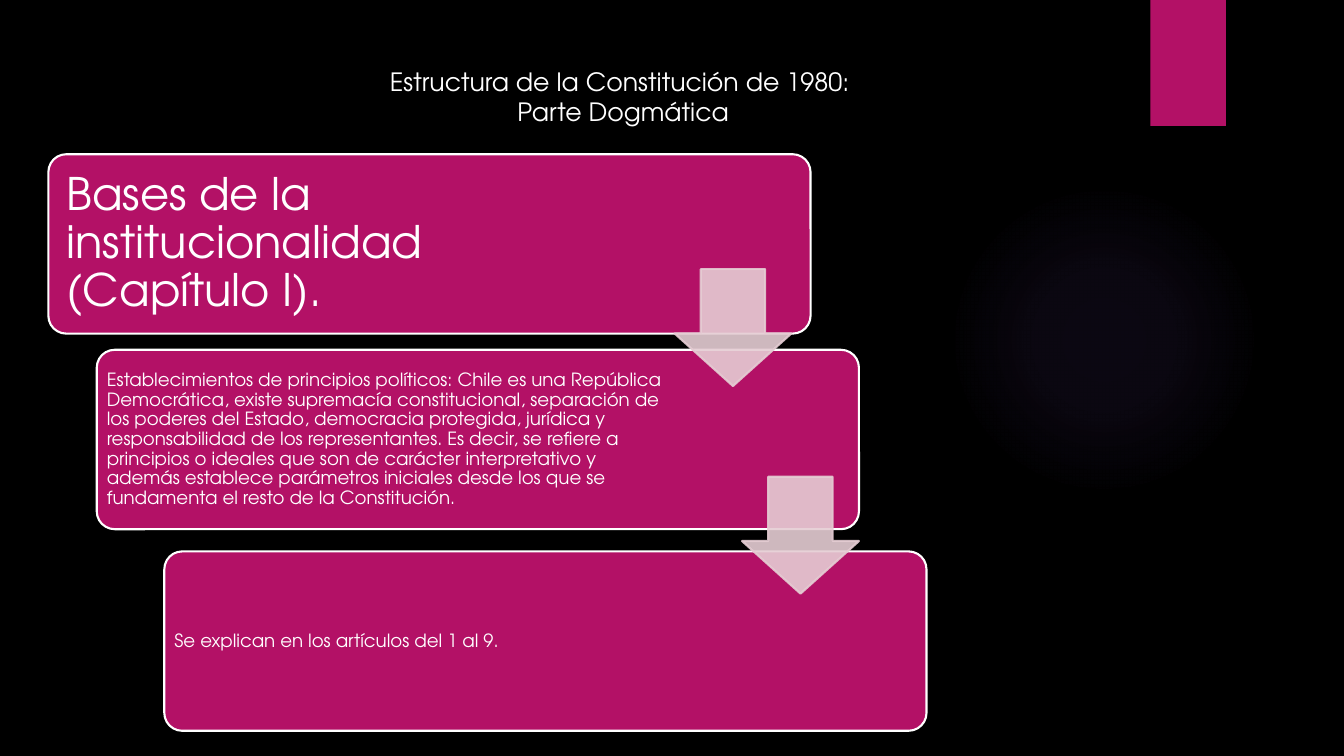
from lxml import etree
from pptx import Presentation
from pptx.dml.color import RGBColor
from pptx.enum.shapes import MSO_SHAPE as Shape
from pptx.enum.text import MSO_ANCHOR as Anchor, PP_ALIGN as Align
from pptx.oxml import parse_xml
from pptx.oxml.ns import nsdecls, qn
from pptx.util import Pt

# Content
TITLE = ["Estructura de la Constitución de 1980: ", "Parte Dogmática"]
STEPS = [  # left, top, text size, inset, text
    (48, 153, 32, 13, "Bases de la institucionalidad (Capítulo I)."),
    (96, 347, 13, 5,
     "Establecimientos de principios políticos: Chile es una República "
     "Democrática, existe supremacía constitucional, separación de los poderes "
     "del Estado, democracia protegida, jurídica y responsabilidad de los "
     "representantes. Es decir, se refiere a principios o ideales que son de "
     "carácter interpretativo y además establece parámetros iniciales desde los "
     "que se fundamenta el resto de la Constitución."),
    (163, 547, 13, 5, "Se explican en los artículos del 1 al 9."),
]
ARROWS = [(669, 267), (736, 473)]
GLOW_STOPS = [(0, 7), (36, 6), (69, 0)]  # position and opacity, percent

# Format
FONT = "TeX Gyre Adventor"
BLACK = RGBColor(0x00, 0x00, 0x00)
WHITE = RGBColor(0xFF, 0xFF, 0xFF)
MAGENTA = RGBColor(0xB3, 0x11, 0x66)
PINK = RGBColor(0xE5, 0xCC, 0xD3)
VIOLET = RGBColor(0x9B, 0x6B, 0xF2)
STEP_WIDTH, STEP_HEIGHT = 756, 178
TEXT_MARGIN, TEXT_WIDTH = 5, 564
ARROW_SIZE = 116


def px(length):
    return length * 9144  # 100 px to the inch


def add_figure(kind, left, top, width, height, fill, line=None, adjust=()):
    figure = page.shapes.add_shape(kind, px(left), px(top), px(width), px(height))
    figure.shadow.inherit = False
    figure.fill.solid()
    figure.fill.fore_color.rgb = fill
    if line is None:
        figure.line.fill.background()
    else:
        figure.line.color.rgb = line
        figure.line.width = Pt(1.5)
    for index, value in enumerate(adjust):
        figure.adjustments[index] = value
    return figure


def add_text(paragraphs, left, top, width, height, size, inset=(10, 5), wrap=True,
             anchor=Anchor.TOP, align=Align.LEFT, spacing=None):
    box = page.shapes.add_textbox(px(left), px(top), px(width), px(height))
    frame = box.text_frame
    frame.word_wrap = wrap
    frame.vertical_anchor = anchor
    frame.margin_left = frame.margin_right = px(inset[0])
    frame.margin_top = frame.margin_bottom = px(inset[1])
    for index, text in enumerate(paragraphs):
        para = frame.add_paragraph() if index else frame.paragraphs[0]
        para.alignment = align
        para.line_spacing = spacing
        span = para.add_run()
        span.text = text
        span.font.name = FONT
        span.font.size = Pt(size)
        span.font.color.rgb = WHITE


def set_glow(figure, color):
    stops = "".join(
        f'<a:gs pos="{place * 1000}"><a:srgbClr val="{color}">'
        f'<a:alpha val="{opacity * 1000}"/></a:srgbClr></a:gs>'
        for place, opacity in GLOW_STOPS)
    gradient = parse_xml(
        f'<a:gradFill {nsdecls("a")} rotWithShape="1"><a:gsLst>{stops}</a:gsLst>'
        '<a:path path="circle"><a:fillToRect l="50000" t="50000" r="50000" b="50000"/>'
        '</a:path></a:gradFill>')
    properties = figure.element.spPr
    properties.replace(properties.find(qn("a:solidFill")), gradient)


def set_opacity(figure, percent):
    for color in figure.element.spPr.iter(qn("a:srgbClr")):
        etree.SubElement(color, qn("a:alpha")).set("val", str(percent * 1000))


deck = Presentation()
deck.slide_width, deck.slide_height = px(1333), px(750)
page = deck.slides.add_slide(deck.slide_layouts[6])

# Background, glow and corner tab
page.background.fill.solid()
page.background.fill.fore_color.rgb = BLACK
set_glow(add_figure(Shape.OVAL, 941, 183, 308, 308, VIOLET), VIOLET)
add_figure(Shape.RECTANGLE, 1141, 0, 75, 125, MAGENTA)

# Title
add_text(TITLE, 374, 61, 488, 71, 18, wrap=False, align=Align.CENTER)

# Steps
for left, top, size, inset, text in STEPS:
    add_figure(Shape.ROUNDED_RECTANGLE, left, top, STEP_WIDTH, STEP_HEIGHT,
               MAGENTA, line=WHITE, adjust=[0.1])
    add_text([text], left + TEXT_MARGIN, top + TEXT_MARGIN, TEXT_WIDTH,
             STEP_HEIGHT - 2 * TEXT_MARGIN, size, inset=(inset, inset),
             anchor=Anchor.MIDDLE, spacing=0.9)

# Arrows between the steps
for left, top in ARROWS:
    arrow = add_figure(Shape.DOWN_ARROW, left, top, ARROW_SIZE, ARROW_SIZE,
                       PINK, line=PINK, adjust=[0.55, 0.45])
    set_opacity(arrow, 90)

deck.save("out.pptx")
